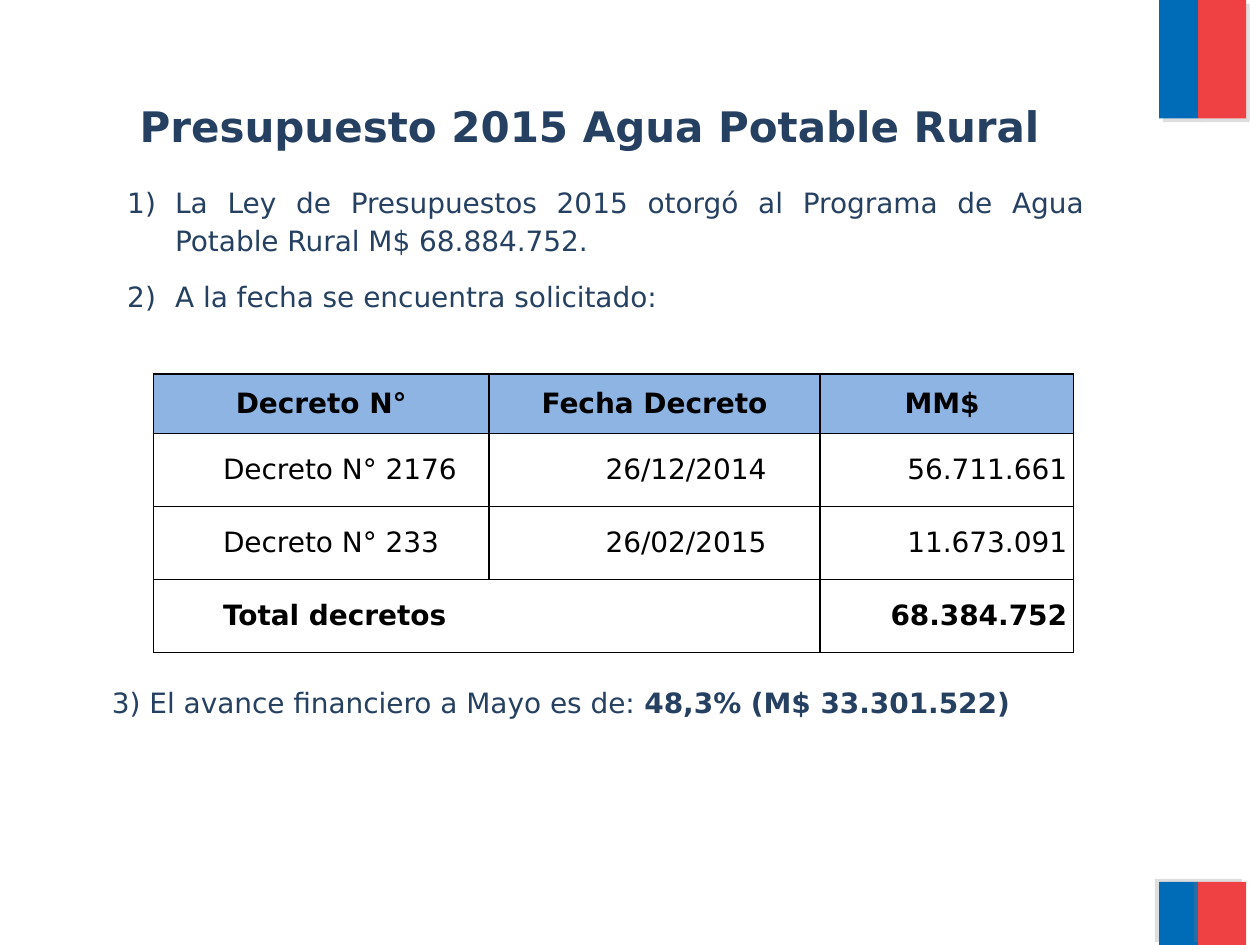
from dataclasses import dataclass

from lxml import etree
from pptx import Presentation
from pptx import util as u
from pptx.dml.color import RGBColor
from pptx.enum import shapes, text
from pptx.oxml import ns


@dataclass(frozen=True)
class Theme:
    font: str = "DejaVu Sans"
    ink: str = "254061"
    black: str = "000000"
    header: str = "8EB4E3"
    blue: str = "006CB7"
    red: str = "EF4144"
    shadow: str = "808080"
    title_size: int = 24
    body_size: int = 16


def add_xml(parent, tag, **attributes):
    values = {name: str(value) for name, value in attributes.items()}
    return etree.SubElement(parent, ns.qn(tag), values)


class SlideBuilder:
    """Holds the theme and the current slide, and adds each kind of element."""

    def __init__(self, presentation, theme):
        self.theme = theme
        self.slide = presentation.slides.add_slide(presentation.slide_layouts[1])

    def place(self, shape, box):
        shape.left, shape.top, shape.width, shape.height = map(u.Inches, box)

    def style(self, paragraph, alignment, color, size, bold=None):
        paragraph.alignment = alignment
        paragraph.font.name = self.theme.font
        paragraph.font.size = u.Pt(size)
        paragraph.font.color.rgb = RGBColor.from_string(color)
        paragraph.font.bold = bold

    def style_item(self, paragraph):
        self.style(paragraph, text.PP_ALIGN.JUSTIFY, self.theme.ink, self.theme.body_size)
        paragraph.line_spacing = 1.15
        paragraph.space_before = u.Pt(0)
        paragraph.space_after = u.Pt(10)
        properties = paragraph._p.get_or_add_pPr()
        properties.set("marL", str(u.Inches(0.38)))
        properties.set("indent", str(u.Inches(-0.38)))
        return properties

    def flag_bar(self, box, color, direction):
        bar = self.slide.shapes.add_shape(shapes.MSO_SHAPE.RECTANGLE, *map(u.Inches, box))
        bar.fill.solid()
        bar.fill.fore_color.rgb = RGBColor.from_string(color)
        bar.line.fill.background()
        effects = add_xml(bar._element.spPr, "a:effectLst")
        shadow = add_xml(effects, "a:outerShdw", blurRad=0, dist=u.Pt(3),
                         dir=direction * 60000, algn="ctr", rotWithShape=0)
        shade = add_xml(shadow, "a:srgbClr", val=self.theme.shadow)
        add_xml(shade, "a:alpha", val=25000)

    def title(self, wording, box):
        title = self.slide.shapes.title
        self.place(title, box)
        title.text_frame.text = wording
        title.text_frame.auto_size = text.MSO_AUTO_SIZE.NONE
        self.style(title.text_frame.paragraphs[0], text.PP_ALIGN.CENTER,
                   self.theme.ink, self.theme.title_size, True)

    def numbered_list(self, items, box):
        body = self.slide.placeholders[1]
        self.place(body, box)
        frame = body.text_frame
        frame.text = "\n".join(items)
        frame.auto_size = text.MSO_AUTO_SIZE.NONE
        for paragraph in frame.paragraphs:
            properties = self.style_item(paragraph)
            bullet_font = add_xml(properties, "a:buFont", typeface=self.theme.font)
            bullet_number = add_xml(properties, "a:buAutoNum", type="arabicParenR")
            default_run = properties.find(ns.qn("a:defRPr"))
            if default_run is not None:
                default_run.addprevious(bullet_font)
                default_run.addprevious(bullet_number)

    def closing_item(self, wording, figure, box):
        shape = self.slide.shapes.add_textbox(*map(u.Inches, box))
        shape.text_frame.word_wrap = True
        paragraph = shape.text_frame.paragraphs[0]
        self.style_item(paragraph)
        paragraph.add_run().text = wording
        run = paragraph.add_run()
        run.text = figure
        run.font.bold = True

    def cell(self, cell, wording, alignment, bold, indent, fill):
        cell.text = wording
        cell.vertical_anchor = text.MSO_ANCHOR.MIDDLE
        cell.margin_left = cell.margin_right = u.Inches(0.05)
        cell.margin_top = cell.margin_bottom = 0
        paragraph = cell.text_frame.paragraphs[0]
        self.style(paragraph, alignment, self.theme.black, self.theme.body_size, bold)
        paragraph._p.get_or_add_pPr().set("marL", str(u.Inches(indent)))
        self.borders(cell)
        if fill:
            cell.fill.solid()
            cell.fill.fore_color.rgb = RGBColor.from_string(fill)
        else:
            cell.fill.background()

    def borders(self, cell):
        for side in ("a:lnL", "a:lnR", "a:lnT", "a:lnB"):
            line = add_xml(cell._tc.get_or_add_tcPr(), side, w=u.Pt(1))
            add_xml(add_xml(line, "a:solidFill"), "a:srgbClr", val=self.theme.black)

    def table(self, rows, box, widths, heights):
        table = self.slide.shapes.add_table(
            len(rows), len(widths), *map(u.Inches, box)).table
        table.first_row = table.horz_banding = False
        for column, width in zip(table.columns, widths):
            column.width = u.Inches(width)
        for row, height in zip(table.rows, heights):
            row.height = u.Inches(height)
        align = text.PP_ALIGN
        last = len(rows) - 1
        for i, row in enumerate(rows):
            for j, wording in enumerate(row):
                header = i == 0
                alignment = align.CENTER if header else (align.LEFT, align.CENTER, align.RIGHT)[j]
                flush = header or (i == last and j == 2)
                self.cell(table.cell(i, j), wording, alignment, i in (0, last),
                          0 if flush else 0.5, self.theme.header if header else None)
        table.cell(last, 0).merge(table.cell(last, 1))


def main():
    presentation = Presentation()
    presentation.slide_width, presentation.slide_height = u.Inches(10), u.Inches(7.5)
    theme = Theme()
    builder = SlideBuilder(presentation, theme)
    for top, height, direction in ((0, 0.94, 45), (7, 0.5, 215)):
        for left, width, color in ((9.2, 0.31, theme.blue), (9.51, 0.38, theme.red)):
            builder.flag_bar((left, top, width, height), color, direction)
    builder.numbered_list(
        ["La Ley de Presupuestos 2015 otorgó al Programa de Agua Potable Rural M$ 68.884.752.",
         "A la fecha se encuentra solicitado:"],
        (0.91, 1.38, 7.8, 1.14))
    builder.title("Presupuesto 2015 Agua Potable Rural", (0.98, 0.75, 7.4, 0.5))
    builder.table(
        [("Decreto N°", "Fecha Decreto", "MM$ "),
         ("Decreto N° 2176", "26/12/2014", "56.711.661"),
         ("Decreto N° 233", "26/02/2015", "11.673.091"),
         ("Total decretos", "", "68.384.752")],
        (1.22, 2.97, 7.3, 2.21), (2.66, 2.63, 2.01), (0.47, 0.58, 0.58, 0.58))
    builder.closing_item("3) El avance financiero a Mayo es de: ",
                         "48,3% (M$ 33.301.522)", (0.79, 5.35, 7.58, 0.41))
    presentation.save("out.pptx")


if __name__ == "__main__":
    main()
